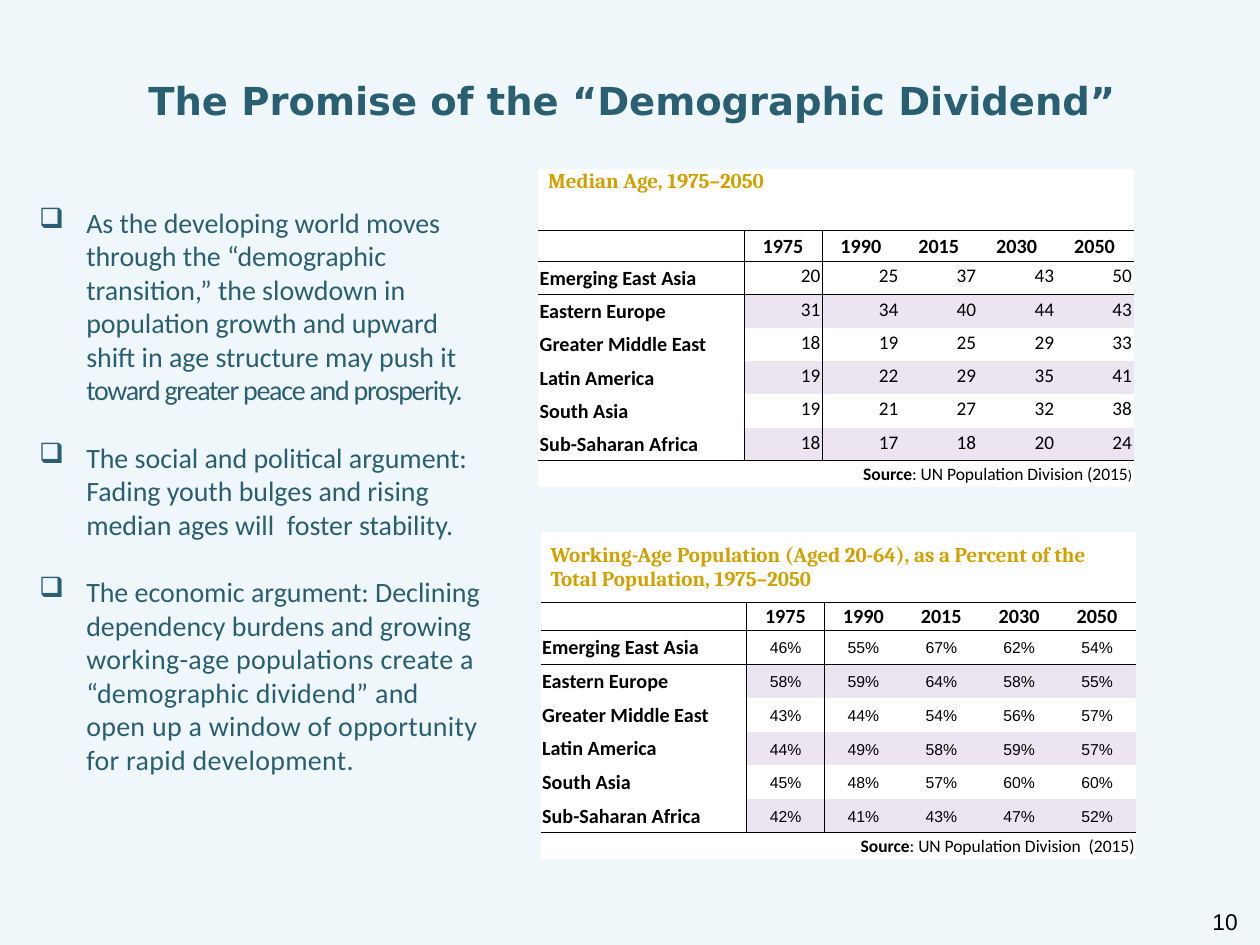
import dataclasses

import lxml.etree
import pptx
import pptx.dml.color
import pptx.enum.text
import pptx.oxml.ns
import pptx.util
from pptx.util import Cm, Pt

Align = pptx.enum.text.PP_ALIGN
Anchor = pptx.enum.text.MSO_ANCHOR
qn = pptx.oxml.ns.qn


@dataclasses.dataclass(frozen=True)
class Theme:
    background: str = "F0F7FA"
    teal: str = "295F71"
    gold: str = "D2A000"
    black: str = "000000"
    white: str = "FFFFFF"
    band: str = "EDE4F1"
    title_size: float = 22
    body_size: float = 16
    number_size: float = 13
    caption_size: float = 12
    label_size: float = 11.5
    source_size: float = 10
    rule_width: float = 0.5


theme = Theme()


def style(span, size, font, color, bold=False, spacing=0):
    """Format one run; spacing is the extra space between letters in points."""
    span.font.size = Pt(size)
    span.font.name = font
    span.font.bold = bold
    span.font.color.rgb = pptx.dml.color.RGBColor.from_string(color)
    if spacing:
        span.font._element.set("spc", str(int(spacing * 100)))


def add_rule(cell, side):
    """Draw a thin black border on one side (L, R, T or B) of a cell."""
    line = lxml.etree.SubElement(cell._tc.get_or_add_tcPr(), qn(f"a:ln{side}"))
    line.set("w", str(Pt(theme.rule_width)))
    fill = lxml.etree.SubElement(line, qn("a:solidFill"))
    lxml.etree.SubElement(fill, qn("a:srgbClr")).set("val", theme.black)


deck = pptx.Presentation()
deck.slide_width, deck.slide_height = Cm(25.4), Cm(19.05)
page = deck.slides.add_slide(deck.slide_layouts[6])
page.background.fill.solid()
page.background.fill.fore_color.rgb = pptx.dml.color.RGBColor.from_string(theme.background)

# Title and page number
single_lines = [
    ("The Promise of the “Demographic Dividend”", (0.84, 1.42, 23.8, 1.98), Anchor.TOP,
     Align.CENTER, theme.title_size, "DejaVu Sans", theme.teal, True),
    ("10", (23.7, 18.21, 1.5, 0.74), Anchor.MIDDLE,
     Align.RIGHT, theme.number_size, "Arial", theme.black, False),
]
for text, place, anchor, align, size, font, color, bold in single_lines:
    box = page.shapes.add_textbox(*map(Cm, place))
    box.text_frame.word_wrap = True
    box.text_frame.vertical_anchor = anchor
    para = box.text_frame.paragraphs[0]
    para.text = text
    para.alignment = align
    style(para.runs[0], size, font, color, bold)

# Arguments on the left: each is a list of (text, letter spacing)
arguments = [
    [("As the developing world moves through the “demographic transition,” the slowdown in "
      "population growth and upward shift in age structure may push it ", 0),
     ("toward greater peace and prosperity.", -0.7)],
    [("The social and political argument: Fading youth bulges and rising median ages "
      "will  foster stability.", 0)],
    [("The economic argument: Declining dependency burdens and growing ", 0),
     ("working-age populations create a “demographic dividend” and open up a window of "
      "opportunity for rapid development.", 0.2)],
]
box = page.shapes.add_textbox(Cm(0.03), Cm(4.01), Cm(10.46), Cm(14.25))
frame = box.text_frame
frame.word_wrap = True
frame.margin_left = frame.margin_right = Cm(0.76)
for index, argument in enumerate(arguments):
    para = frame.add_paragraph() if index else frame.paragraphs[0]
    para.space_after = Pt(19.2)
    properties = para._p.get_or_add_pPr()
    properties.set("marL", str(Cm(0.95)))
    properties.set("indent", str(-Cm(0.95)))
    lxml.etree.SubElement(properties, qn("a:buChar")).set("char", "❑")
    for text, spacing in argument:
        span = para.add_run()
        span.text = text
        style(span, theme.body_size, "Calibri", theme.teal, spacing=spacing)

# Tables on the right
years = ["1975", "1990", "2015", "2030", "2050"]
regions = ["Emerging East Asia", "Eastern Europe", "Greater Middle East",
           "Latin America", "South Asia", "Sub-Saharan Africa"]
tables = [
    dict(place=(10.9, 10.72), heights=(1.43, 0.56, 0.68, 0.53), suffix="%",
         caption="Working-Age Population (Aged 20-64), as a Percent of the\n"
                 "Total Population, 1975–2050",
         caption_anchor=Anchor.MIDDLE,
         source=[("Source", 10), (": UN Population Division  (2015)", 10)],
         values=[(46, 55, 67, 62, 54), (58, 59, 64, 58, 55), (43, 44, 54, 56, 57),
                 (44, 49, 58, 59, 57), (45, 48, 57, 60, 60), (42, 41, 43, 47, 52)],
         value_font=("Arial", 9), value_align=Align.CENTER, value_anchor=Anchor.MIDDLE,
         value_margins=(0.18, 0), value_spacing=1.07),
    dict(place=(10.85, 3.4), heights=(1.25, 0.62, 0.67, 0.53), suffix="",
         caption="Median Age, 1975–2050", caption_anchor=Anchor.TOP,
         source=[("Source", 10), (": UN Population Division (2015", 10), (")", 8)],
         values=[(20, 25, 37, 43, 50), (31, 34, 40, 44, 43), (18, 19, 25, 29, 33),
                 (19, 22, 29, 35, 41), (19, 21, 27, 32, 38), (18, 17, 18, 20, 24)],
         value_font=("Calibri", 11), value_align=Align.RIGHT, value_anchor=Anchor.BOTTOM,
         value_margins=(0.03, 0.13), value_spacing=1),
]
widths = [4.15] + [1.57] * len(years)
last = len(regions) + 2
for data in tables:
    caption_height, header_height, region_height, source_height = data["heights"]
    heights = [caption_height, header_height] + [region_height] * len(regions) + [source_height]
    graphic = page.shapes.add_table(len(heights), len(widths), *map(Cm, data["place"]),
                                    Cm(sum(widths)), Cm(sum(heights)))
    table = graphic.table
    table.first_row = table.horz_banding = False
    # "No style, no grid" leaves only the rules drawn below
    table._tbl.tblPr.find(qn("a:tableStyleId")).text = "{2D5ABB26-0587-4C30-8999-92F81FD0307C}"
    for column, width in zip(table.columns, widths):
        column.width = Cm(width)
    for row, height in zip(table.rows, heights):
        row.height = Cm(height)
    for row in (0, last):
        table.cell(row, 0).merge(table.cell(row, len(years)))

    rows = [[data["caption"]] + [""] * len(years), [""] + years]
    rows += [[region] + [f"{value}{data['suffix']}" for value in values]
             for region, values in zip(regions, data["values"])]
    rows.append([""] * len(widths))
    for row, texts in enumerate(rows):
        for column, text in enumerate(texts):
            cell = table.cell(row, column)
            is_value = 1 < row < last and column > 0
            inside = 0 < row < last
            rules = {"L": inside and column == 1, "R": inside and column == 0,
                     "T": row in (1, 2, last), "B": row in (0, 1, last - 1)}
            for side, shown in rules.items():
                if shown:
                    add_rule(cell, side)
            cell.fill.solid()
            cell.fill.fore_color.rgb = pptx.dml.color.RGBColor.from_string(
                theme.band if is_value and row % 2 else theme.white)
            side_margin, bottom_margin = data["value_margins"] if is_value else (0.03, 0)
            cell.margin_left = cell.margin_right = Cm(side_margin)
            cell.margin_top, cell.margin_bottom = Cm(0.02), Cm(bottom_margin)
            cell.vertical_anchor = data["value_anchor"] if is_value else Anchor.MIDDLE
            font, size, color, bold = "Calibri", theme.label_size, theme.black, not is_value
            if row == 0:
                cell.margin_left = Cm(0.2)
                cell.vertical_anchor = data["caption_anchor"]
                font, size, color = "Cambria", theme.caption_size, theme.gold
            elif is_value:
                font, size = data["value_font"]
            cell.text_frame.text = text
            for para in cell.text_frame.paragraphs:
                if is_value:
                    para.alignment = data["value_align"]
                    para.line_spacing = data["value_spacing"]
                elif row == 1:
                    para.alignment = Align.CENTER
                for span in para.runs:
                    style(span, size, font, color, bold)
                if not text:
                    ending = lxml.etree.SubElement(para._p, qn("a:endParaRPr"))
                    ending.set("sz", str(int(theme.source_size * 100)))

    para = table.cell(last, 0).text_frame.paragraphs[0]
    para.alignment = Align.RIGHT
    for text, size in data["source"]:
        span = para.add_run()
        span.text = text
        style(span, size, "Calibri", theme.black, bold=text == "Source")

deck.save("out.pptx")
